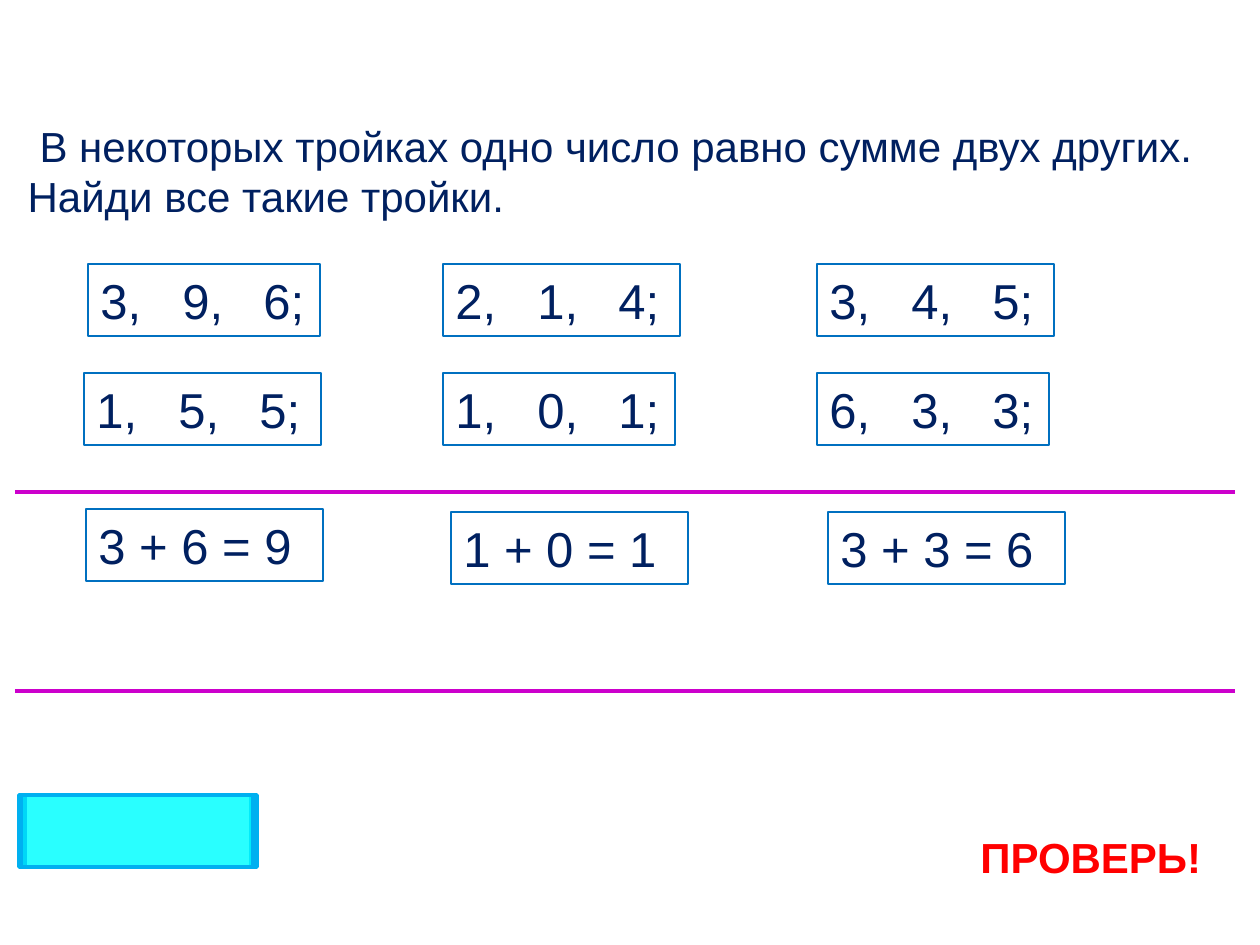
from lxml.etree import SubElement
from pptx import Presentation
from pptx.dml.color import RGBColor
from pptx.enum.shapes import MSO_CONNECTOR as Connector, MSO_SHAPE as Shape
from pptx.enum.text import MSO_ANCHOR as Anchor, MSO_AUTO_SIZE as AutoSize, PP_ALIGN as Align
from pptx.oxml.ns import qn
from pptx.util import Pt

EMU_PER_PX = 914400 // 126
COLORS = {
    "navy": "002060",
    "red": "FF0000",
    "blue": "0070C0",
    "magenta": "CC00CC",
    "cyan": "00FFFF",
    "sky": "00B0F0",
}
TAB_STOPS = (82, 163)
BOX_HEIGHT = 72
WIDE, NARROW = 237, 232
TRIPLES = [
    ("3, 9, 6;", 88, 264, NARROW),
    ("2, 1, 4;", 443, 264, WIDE),
    ("3, 4, 5;", 817, 264, WIDE),
    ("1, 5, 5;", 84, 373, WIDE),
    ("1, 0, 1;", 443, 373, NARROW),
    ("6, 3, 3;", 817, 373, NARROW),
]
ANSWERS = [
    ("3 + 6 = 9", 86, 509),
    ("1 + 0 = 1", 451, 512),
    ("3 + 3 = 6", 828, 512),
]


def px(length):
    return length * EMU_PER_PX


def rgb(name):
    return RGBColor.from_string(COLORS[name])


def write(shape, text, size=28, color="navy", bold=False, indent=0, tabs=()):
    frame = shape.text_frame
    frame.word_wrap = True
    frame.auto_size = AutoSize.SHAPE_TO_FIT_TEXT
    frame.vertical_anchor = Anchor.TOP
    paragraph = frame.paragraphs[0]
    paragraph.alignment = Align.LEFT
    run = paragraph.add_run()
    run.text = text
    run.font.name = "Arial"
    run.font.size = Pt(size)
    run.font.bold = bold
    run.font.color.rgb = rgb(color)
    properties = paragraph._p.get_or_add_pPr()
    if indent:
        properties.set("indent", str(px(indent)))
    if tabs:
        tab_list = SubElement(properties, qn("a:tabLst"))
        for stop in tabs:
            SubElement(tab_list, qn("a:tab"), pos=str(px(stop)), algn="l")


def add_block(slide, kind, left, top, width, height, line, weight):
    block = slide.shapes.add_shape(kind, px(left), px(top), px(width), px(height))
    block.shadow.inherit = False
    block.fill.background()
    block.line.color.rgb = rgb(line)
    block.line.width = Pt(weight)
    return block


def add_number_box(slide, text, left, top, width=WIDE, tabs=()):
    box = add_block(slide, Shape.RECTANGLE, left, top, width, BOX_HEIGHT, "blue", 0.75)
    write(box, text, tabs=tabs)


def add_cover(slide, left):
    cover = add_block(slide, Shape.FLOWCHART_PROCESS, left, 795, 232, BOX_HEIGHT, "sky", 2)
    cover.fill.solid()
    cover.fill.fore_color.rgb = rgb("cyan")
    fill_color = cover._element.spPr.find(qn("a:solidFill"))[0]
    SubElement(fill_color, qn("a:alpha"), val="30000")


def add_divider(slide, top):
    divider = slide.shapes.add_connector(Connector.STRAIGHT, px(15), px(top), px(1235), px(top))
    divider.line.color.rgb = rgb("magenta")
    divider.line.width = Pt(2.25)
    SubElement(divider._element.spPr, qn("a:effectLst"))


def add_question(slide):
    question = slide.shapes.title
    question.left, question.top = px(15), px(114)
    question.width, question.height = px(1250), px(118)
    write(
        question,
        "В некоторых тройках одно число равно сумме двух других. Найди все такие тройки.",
        size=24,
        indent=12,
    )


def add_check_label(slide):
    label = slide.shapes.add_textbox(px(968), px(825), px(272), px(63))
    write(label, "ПРОВЕРЬ!", size=24, color="red", bold=True)


def main():
    deck = Presentation()
    deck.slide_width, deck.slide_height = px(1260), px(945)
    slide = deck.slides.add_slide(deck.slide_layouts[5])
    add_question(slide)
    for triple, left, top, width in TRIPLES:
        add_number_box(slide, triple.replace(" ", "\t"), left, top, width, TAB_STOPS)
    add_divider(slide, 492)
    add_check_label(slide)
    for left in (19, 23, 25, 21, 21):
        add_cover(slide, left)
    for answer, left, top in ANSWERS:
        add_number_box(slide, answer, left, top)
    add_divider(slide, 691)
    deck.save("out.pptx")


if __name__ == "__main__":
    main()
